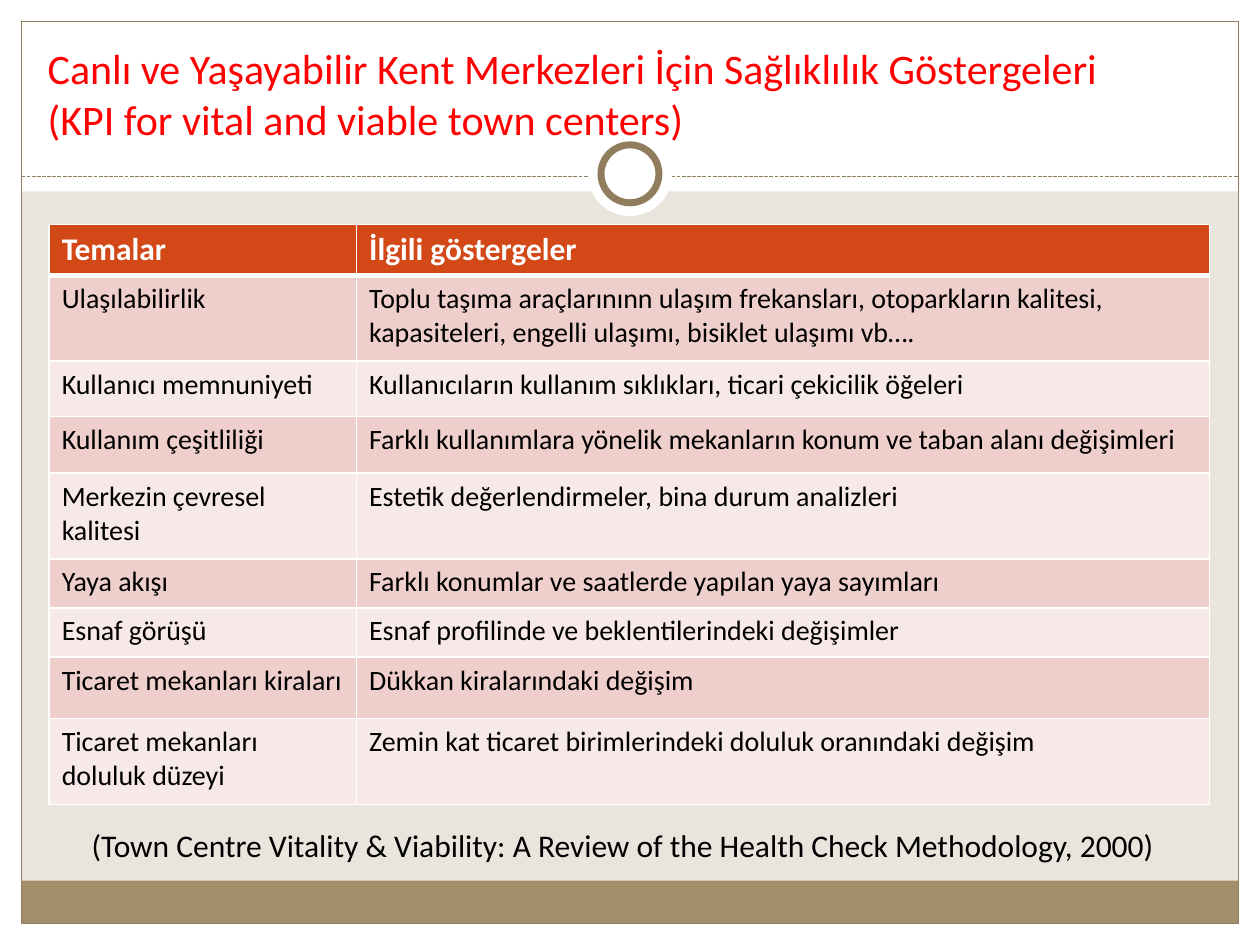
from pptx import Presentation
from pptx.dml.color import RGBColor
from pptx.enum.dml import MSO_LINE
from pptx.enum.shapes import MSO_CONNECTOR, MSO_SHAPE
from pptx.oxml import parse_xml
from pptx.oxml.ns import nsdecls
from pptx.util import Inches, Pt

TITLE = ["Canlı ve Yaşayabilir Kent Merkezleri İçin Sağlıklılık Göstergeleri",
         "(KPI for vital and viable town centers)"]
CITATION = ["(Town Centre Vitality & Viability: A Review of the Health Check Methodology, 2000)"]
INDICATORS = [
    (0.4, "Temalar", "İlgili göstergeler"),
    (0.68, "Ulaşılabilirlik",
     "Toplu taşıma araçlarınınn ulaşım frekansları, otoparkların kalitesi, "
     "kapasiteleri, engelli ulaşımı, bisiklet ulaşımı vb…."),
    (0.44, "Kullanıcı memnuniyeti", "Kullanıcıların kullanım sıklıkları, ticari çekicilik öğeleri"),
    (0.45, "Kullanım çeşitliliği",
     "Farklı kullanımlara yönelik mekanların konum ve taban alanı değişimleri"),
    (0.68, "Merkezin çevresel kalitesi", "Estetik değerlendirmeler, bina durum analizleri"),
    (0.39, "Yaya akışı", "Farklı konumlar ve saatlerde yapılan yaya sayımları"),
    (0.39, "Esnaf görüşü", "Esnaf profilinde ve beklentilerindeki değişimler"),
    (0.49, "Ticaret mekanları kiraları", "Dükkan kiralarındaki değişim"),
    (0.68, "Ticaret mekanları doluluk düzeyi",
     "Zemin kat ticaret birimlerindeki doluluk oranındaki değişim"),
]
COLUMN_WIDTHS = [2.44, 6.77]
THEME = {
    "font": "Calibri",
    "paper": "E9E5DC", "white": "FFFFFF", "black": "000000", "title": "FF0000",
    "band": "A28E6A", "trim": "8F7D5E",
    "header": "D34817", "rows": ["EFCFCC", "F7E9E8"],
    "title_size": 24, "lead_size": 18, "body_size": 16,
}
WIDTH, HEIGHT, MARGIN = 10, 7.5, 0.17
RULE_Y = 1.4


def rgb(color):
    return RGBColor.from_string(color)


def write(frame, lines, size=THEME["body_size"], color=THEME["black"], bold=False):
    frame.word_wrap = True
    paragraph = frame.paragraphs[0]
    for index, line in enumerate(lines):
        if index:
            paragraph.add_line_break()
        paragraph.add_run().text = line
    font = paragraph.font
    font.name, font.size, font.bold = THEME["font"], Pt(size), bold
    font.color.rgb = rgb(color)
    for run in paragraph.runs:
        run.font.name, run.font.size, run.font.bold = THEME["font"], Pt(size), bold
        run.font.color.rgb = rgb(color)


def add_panel(slide, box, kind=MSO_SHAPE.RECTANGLE, fill=None, line=None, weight=0.75):
    panel = slide.shapes.add_shape(kind, *map(Inches, box))
    panel.shadow.inherit = False
    if fill:
        panel.fill.solid()
        panel.fill.fore_color.rgb = rgb(fill)
    else:
        panel.fill.background()
    if line:
        panel.line.color.rgb = rgb(line)
        panel.line.width = Pt(weight)
    else:
        panel.line.fill.background()


def add_frame(slide):
    white, trim = THEME["white"], THEME["trim"]
    inner_width = WIDTH - 2 * MARGIN
    for box in [(0, HEIGHT - MARGIN, WIDTH, MARGIN), (0, 0, WIDTH, 1.52),
                (0, 0, MARGIN, HEIGHT), (WIDTH - MARGIN, 0, MARGIN, HEIGHT)]:
        add_panel(slide, box, fill=white)
    add_panel(slide, (MARGIN, 6.99, inner_width, 0.34), fill=THEME["band"])
    add_panel(slide, (MARGIN, MARGIN, inner_width, HEIGHT - 2 * MARGIN), line=trim)

    rule = slide.shapes.add_connector(
        MSO_CONNECTOR.STRAIGHT, Inches(MARGIN), Inches(RULE_Y),
        Inches(WIDTH - MARGIN), Inches(RULE_Y))
    rule.line.color.rgb = rgb(trim)
    rule.line.width = Pt(0.75)
    rule.line.dash_style = MSO_LINE.SQUARE_DOT
    rule._element.spPr.append(parse_xml(f"<a:effectLst {nsdecls('a')}/>"))

    for size, line in [(0.67, None), (0.46, trim)]:
        box = ((WIDTH - size) / 2, 1.38 - size / 2, size, size)
        add_panel(slide, box, MSO_SHAPE.OVAL, fill=white, line=line, weight=4)


def set_borders(cell, bottom):
    properties = cell._tc.get_or_add_tcPr()
    weights = {"lnL": 1, "lnR": 1, "lnT": 1, "lnB": bottom}
    for position, (side, weight) in enumerate(weights.items()):
        properties.insert(position, parse_xml(
            f'<a:{side} {nsdecls("a")} w="{Pt(weight)}"><a:solidFill>'
            f'<a:srgbClr val="{THEME["white"]}"/></a:solidFill></a:{side}>'))


def add_indicators(slide):
    heights = [height for height, *_ in INDICATORS]
    table = slide.shapes.add_table(
        len(INDICATORS), len(COLUMN_WIDTHS), Inches(0.39), Inches(1.78),
        Inches(sum(COLUMN_WIDTHS)), Inches(sum(heights))).table
    for column, width in zip(table.columns, COLUMN_WIDTHS):
        column.width = Inches(width)
    for index, (height, *texts) in enumerate(INDICATORS):
        table.rows[index].height = Inches(height)
        is_header = index == 0
        fill = THEME["header"] if is_header else THEME["rows"][(index - 1) % 2]
        style = (dict(size=THEME["lead_size"], color=THEME["white"], bold=True)
                 if is_header else {})
        for cell, text in zip(table.rows[index].cells, texts):
            cell.fill.solid()
            cell.fill.fore_color.rgb = rgb(fill)
            set_borders(cell, bottom=3 if is_header else 1)
            write(cell.text_frame, [text], **style)


def add_text(slide, box, lines, **style):
    write(slide.shapes.add_textbox(*map(Inches, box)).text_frame, lines, **style)


def main():
    deck = Presentation()
    deck.slide_width, deck.slide_height = Inches(WIDTH), Inches(HEIGHT)
    slide = deck.slides.add_slide(deck.slide_layouts[6])
    slide.background.fill.solid()
    slide.background.fill.fore_color.rgb = rgb(THEME["paper"])
    add_frame(slide)
    add_indicators(slide)
    add_text(slide, (0.63, 6.51, 8.74, 0.4), CITATION, size=THEME["lead_size"])
    add_text(slide, (0.28, 0.29, 9.53, 0.91), TITLE,
             size=THEME["title_size"], color=THEME["title"])
    deck.save("out.pptx")


if __name__ == "__main__":
    main()
